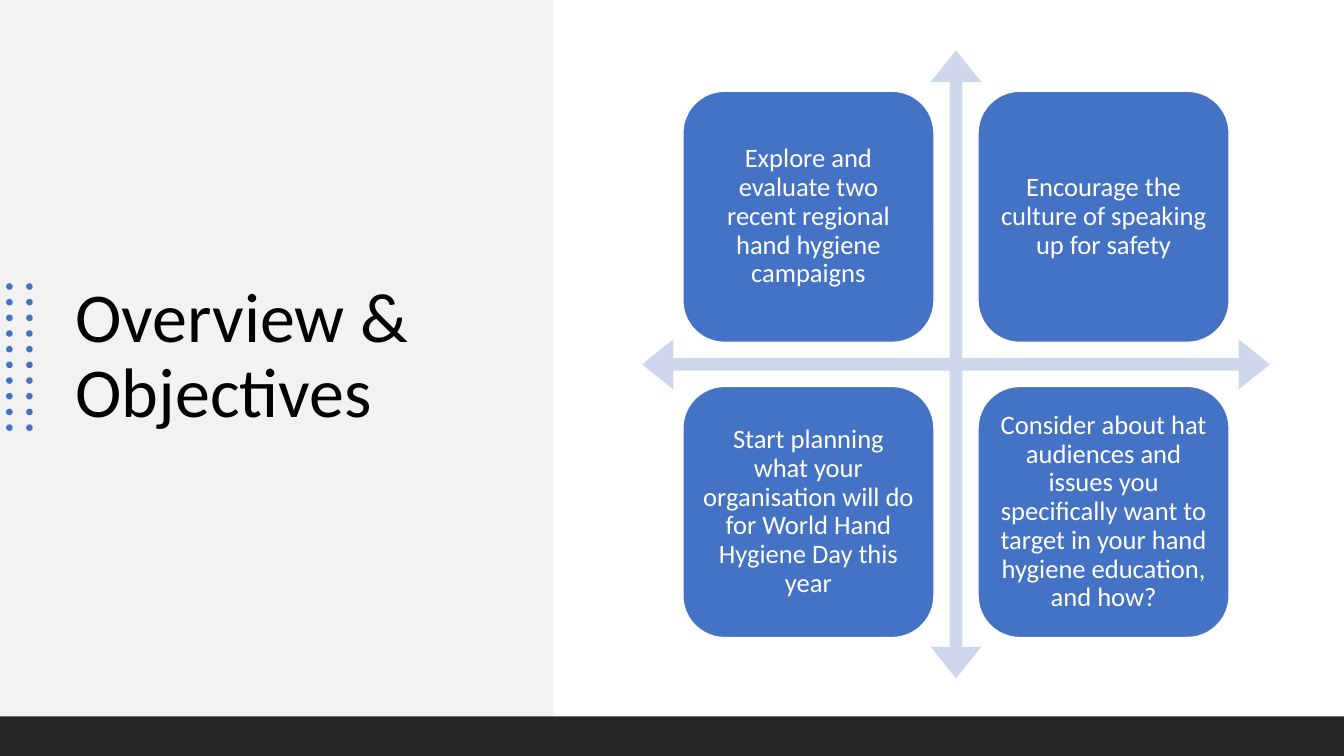
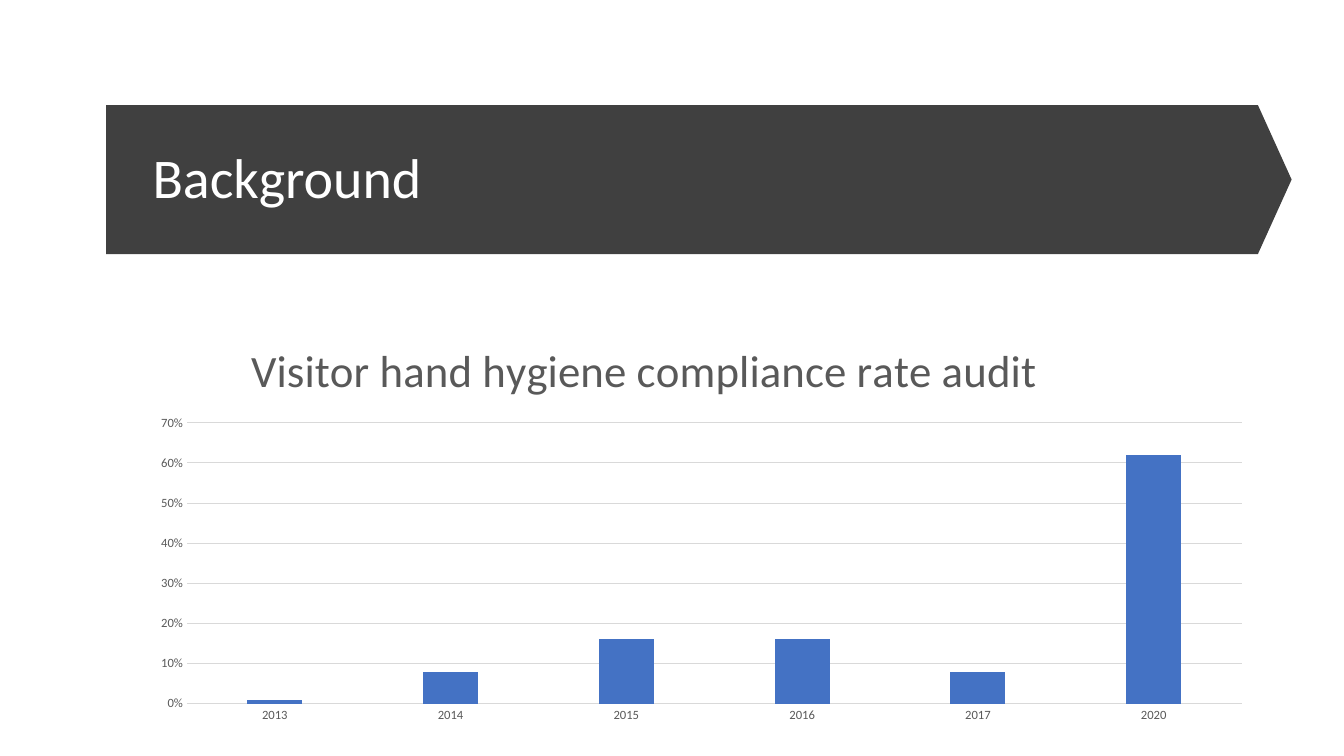
from lxml import etree
from pptx import Presentation
from pptx.chart.data import CategoryChartData
from pptx.dml.color import RGBColor
from pptx.enum.chart import XL_CHART_TYPE, XL_TICK_MARK
from pptx.enum.shapes import MSO_SHAPE
from pptx.enum.text import MSO_ANCHOR, PP_ALIGN
from pptx.oxml.ns import qn
from pptx.util import Pt

RECT, OVAL = MSO_SHAPE.RECTANGLE, MSO_SHAPE.OVAL
ROUNDED, PENTAGON = MSO_SHAPE.ROUNDED_RECTANGLE, MSO_SHAPE.PENTAGON
QUAD_ARROW = MSO_SHAPE.QUAD_ARROW
COLUMNS, NO_TICKS = XL_CHART_TYPE.COLUMN_CLUSTERED, XL_TICK_MARK.NONE
MIDDLE, LEFT, CENTER = MSO_ANCHOR.MIDDLE, PP_ALIGN.LEFT, PP_ALIGN.CENTER

FONT = "Calibri"
BLACK = RGBColor(0x00, 0x00, 0x00)
WHITE = RGBColor(0xFF, 0xFF, 0xFF)
BLUE = RGBColor(0x44, 0x72, 0xC4)
PALE_BLUE = RGBColor(0xCF, 0xD5, 0xEA)
PANEL_GREY = RGBColor(0xF2, 0xF2, 0xF2)
FOOTER_GREY = RGBColor(0x26, 0x26, 0x26)
BANNER_GREY = RGBColor(0x40, 0x40, 0x40)
TEXT_GREY = RGBColor(0x59, 0x59, 0x59)
GRID_GREY = RGBColor(0xD9, 0xD9, 0xD9)

SLIDE_W, SLIDE_H = 960, 540
FOOTER_H = 28.3

OBJECTIVES = [
    "Explore and evaluate two recent regional hand hygiene campaigns",
    "Encourage the culture of speaking up for safety",
    "Start planning what your organisation will do for World Hand Hygiene Day this year",
    "Consider about hat audiences and issues you specifically want to target in your "
    "hand hygiene education, and how?",
]
COMPLIANCE = {"2013": 0.01, "2014": 0.08, "2015": 0.16,
              "2016": 0.16, "2017": 0.08, "2020": 0.62}


# Shared helpers
def style_font(font, size, color):
    font.name, font.size, font.color.rgb = FONT, Pt(size), color


def write(frame, text, size, color, align=LEFT):
    frame.word_wrap = True
    frame.vertical_anchor = MIDDLE
    frame.text = text
    paragraph = frame.paragraphs[0]
    paragraph.alignment = align
    paragraph.line_spacing = 0.9
    style_font(paragraph.runs[0].font, size, color)


def add_filled(shapes, kind, left, top, width, height, fill, line=None):
    shape = shapes.add_shape(kind, Pt(left), Pt(top), Pt(width), Pt(height))
    shape.shadow.inherit = False
    shape.fill.solid()
    shape.fill.fore_color.rgb = fill
    if line is None:
        shape.line.fill.background()
    else:
        shape.line.color.rgb = line
        shape.line.width = Pt(1)
    return shape


def add_title(slide, text, left, top, width, height, size, color):
    title = slide.shapes.add_textbox(Pt(left), Pt(top), Pt(width), Pt(height))
    write(title.text_frame, text, size, color)


def set_layout(parent, index, **fractions):
    """Place a chart part by fractions of the chart area."""
    for old in parent.findall(qn("c:layout")):
        parent.remove(old)
    layout = etree.Element(qn("c:layout"))
    manual = etree.SubElement(layout, qn("c:manualLayout"))
    if "w" in fractions:
        etree.SubElement(manual, qn("c:layoutTarget")).set("val", "inner")
    for axis in "xy":
        etree.SubElement(manual, qn(f"c:{axis}Mode")).set("val", "edge")
    for key, value in fractions.items():
        etree.SubElement(manual, qn(f"c:{key}")).set("val", str(value))
    parent.insert(index, layout)


# Overview slide
def add_dots(slide, left, top, columns=2, rows=10):
    dots = slide.shapes.add_group_shape().shapes
    for row in range(rows):
        for column in range(columns):
            add_filled(dots, OVAL, left + column * 14.3, top + row * 11.2,
                       4.7, 4.7, BLUE)


def add_objectives(slide, left, top, size):
    arrows = add_filled(slide.shapes, QUAD_ARROW, left, top, size, size, PALE_BLUE)
    for index, value in enumerate((0.02, 0.04, 0.05)):
        arrows.adjustments[index] = value

    block, margin = 0.4 * size, 0.065 * size
    pitch = size - 2 * margin - block
    for index, objective in enumerate(OBJECTIVES):
        row, column = divmod(index, 2)
        card = add_filled(slide.shapes, ROUNDED, left + margin + column * pitch,
                          top + margin + row * pitch, block, block, BLUE, WHITE)
        frame = card.text_frame
        frame.margin_left = frame.margin_right = Pt(5.7)
        frame.margin_top = frame.margin_bottom = Pt(5.7)
        write(frame, objective, 19, WHITE, CENTER)


def build_overview(slide):
    footer_top = SLIDE_H - FOOTER_H
    add_filled(slide.shapes, RECT, 0, 0, 395.3, footer_top, PANEL_GREY)
    add_title(slide, "Overview & Objectives", 46.8, 95, 305.3, 320.4, 50, BLACK)
    add_dots(slide, 4.4, 202.3)
    add_filled(slide.shapes, RECT, 0, footer_top, SLIDE_W, FOOTER_H, FOOTER_GREY)
    add_objectives(slide, 458.6, 36, 448.6)


# Background slide
def add_banner(slide, text, left, top, width, height):
    banner = add_filled(slide.shapes, PENTAGON, left, top, width, height, BANNER_GREY)
    banner.adjustments[0] = 0.226
    add_title(slide, text, left + 26, top + 20, width - 58, height - 39, 40, WHITE)


def add_audit_chart(slide, left, top, width, height):
    data = CategoryChartData(number_format="0%")
    data.categories = list(COMPLIANCE)
    data.add_series("Series 1", list(COMPLIANCE.values()))
    chart = slide.shapes.add_chart(COLUMNS, Pt(left), Pt(top), Pt(width),
                                   Pt(height), data).chart
    style_font(chart.font, 10, BLACK)
    chart.has_legend = False

    chart.has_title = True
    heading = chart.chart_title.text_frame
    heading.text = "Visitor hand hygiene compliance rate audit"
    heading_font = heading.paragraphs[0].runs[0].font
    style_font(heading_font, 32, TEXT_GREY)
    heading_font.bold = False
    set_layout(chart.chart_title._element, 1, x=0.09, y=0.01)

    plot = chart.plots[0]
    plot.gap_width, plot.overlap, plot.vary_by_categories = 219, -27, False
    bars = plot.series[0].format.fill
    bars.solid()
    bars.fore_color.rgb = BLUE
    set_layout(chart._chartSpace.chart.plotArea, 0, x=0.04, y=0.24, w=0.94, h=0.7)

    years, rates = chart.category_axis, chart.value_axis
    for axis in (years, rates):
        axis.major_tick_mark = axis.minor_tick_mark = NO_TICKS
        style_font(axis.tick_labels.font, 9, TEXT_GREY)
    rates.minimum_scale, rates.maximum_scale, rates.major_unit = 0, 0.7, 0.1
    rates.tick_labels.number_format = "0%"
    rates.tick_labels.number_format_is_linked = False
    rates.format.line.fill.background()
    for line in (years.format.line, rates.major_gridlines.format.line):
        line.color.rgb = GRID_GREY
        line.width = Pt(0.75)


def build_background(slide):
    add_banner(slide, "Background", 75.9, 75, 846.7, 106.5)
    add_audit_chart(slide, 101.5, 233.3, 801.4, 286.6)


def main():
    deck = Presentation()
    deck.slide_width, deck.slide_height = Pt(SLIDE_W), Pt(SLIDE_H)
    blank = deck.slide_layouts[6]
    for build in (build_overview, build_background):
        build(deck.slides.add_slide(blank))
    deck.save("out.pptx")


if __name__ == "__main__":
    main()
